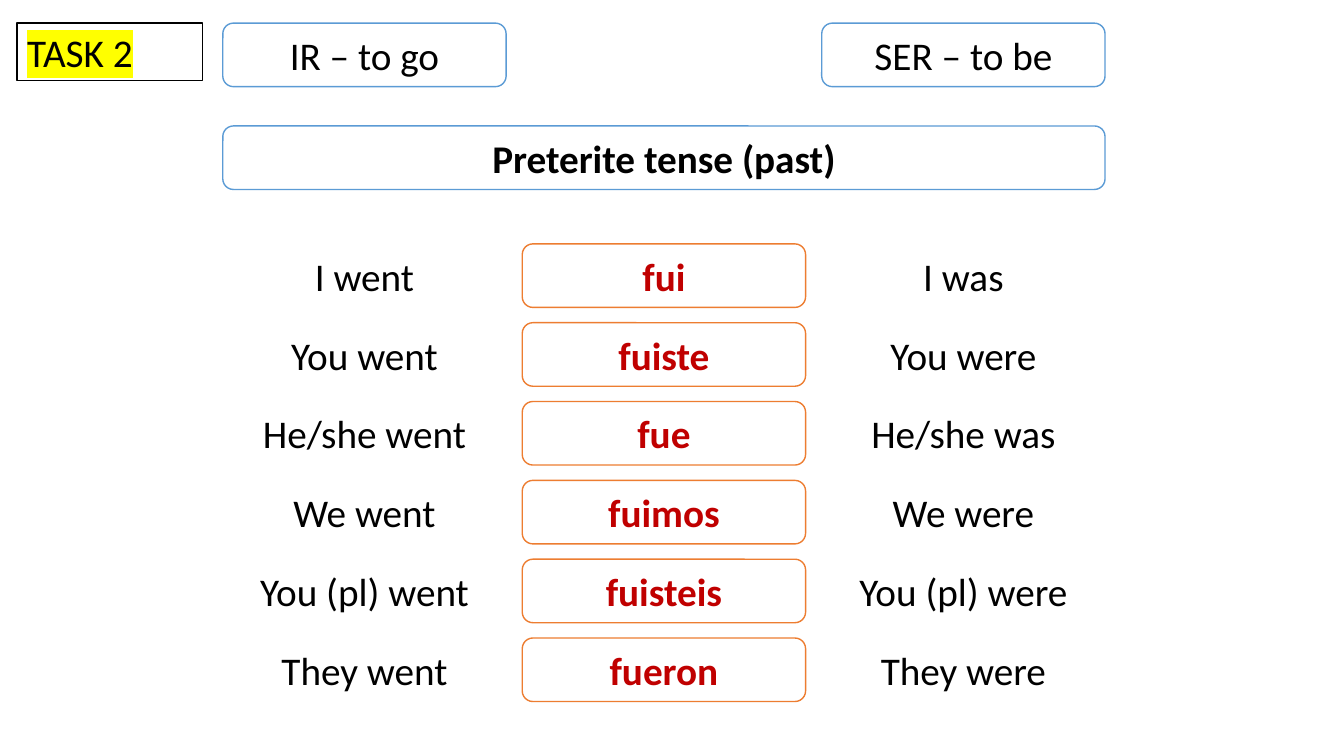
from lxml import etree
from pptx import Presentation, util as u
from pptx.dml.color import RGBColor
from pptx.enum import shapes, text
from pptx.oxml.ns import qn

COLORS = {"paper": "FFFFFF", "ink": "000000", "verb": "C00000",
          "verb_edge": "ED7D31", "title_edge": "5B9BD5", "marker": "FFFF00"}
COLUMN_LEFT, COLUMN_PITCH = 2.21, 2.97
ROW_TOP, ROW_PITCH = 2.42, 0.782
CARD_WIDTH, CARD_HEIGHT = 2.81, 0.63
HEADER_TOP, TENSE_TOP = 0.23, 1.25

CONJUGATION = [
    ("I went", "fui", "I was"),
    ("You went", "fuiste", "You were"),
    ("He/she went", "fue", "He/she was"),
    ("We went", "fuimos", "We were"),
    ("You (pl) went", "fuisteis", "You (pl) were"),
    ("They went", "fueron", "They were"),
]


def rgb(name):
    return RGBColor.from_string(COLORS[name])


def column_left(column):
    return COLUMN_LEFT + column * COLUMN_PITCH


def add_card(parent, box, wording, edge=None, ink="ink", bold=False,
             outline=shapes.MSO_SHAPE.ROUNDED_RECTANGLE):
    """Add a white card with centred text; without an edge colour it has no line."""
    card = parent.add_shape(outline, *(u.Inches(length) for length in box))
    card.shadow.inherit = False
    card.fill.solid()
    card.fill.fore_color.rgb = rgb("paper")
    if edge:
        card.line.color.rgb = rgb(edge)
        card.line.width = u.Pt(1)
    else:
        card.line.fill.background()
    frame = card.text_frame
    frame.word_wrap = True
    frame.vertical_anchor = text.MSO_ANCHOR.MIDDLE
    paragraph = frame.paragraphs[0]
    paragraph.text = wording
    paragraph.alignment = text.PP_ALIGN.CENTER
    font = paragraph.font
    font.name, font.size, font.bold = "Calibri", u.Pt(28), bold
    font.color.rgb = rgb(ink)
    return card


def add_column(parent, column, **style):
    for row, forms in enumerate(CONJUGATION):
        box = (column_left(column), ROW_TOP + row * ROW_PITCH, CARD_WIDTH, CARD_HEIGHT)
        add_card(parent, box, forms[column], **style)


def add_conjugation(slide):
    add_column(slide.shapes, 1, edge="verb_edge", ink="verb", bold=True)
    for translation in (0, 2):
        add_column(slide.shapes.add_group_shape().shapes, translation)


def add_headings(slide):
    for column, infinitive in ((0, "IR – to go"), (2, "SER – to be")):
        box = (column_left(column), HEADER_TOP, CARD_WIDTH, CARD_HEIGHT)
        add_card(slide.shapes, box, infinitive, edge="title_edge")
    full_width = 2 * COLUMN_PITCH + CARD_WIDTH
    add_card(slide.shapes, (COLUMN_LEFT, TENSE_TOP, full_width, CARD_HEIGHT),
             "Preterite tense (past)", edge="title_edge", bold=True)


def add_task_label(slide, box):
    label = add_card(slide.shapes, box, "TASK 2", edge="ink",
                     outline=shapes.MSO_SHAPE.RECTANGLE)
    label.text_frame.vertical_anchor = text.MSO_ANCHOR.TOP
    label.text_frame.auto_size = text.MSO_AUTO_SIZE.SHAPE_TO_FIT_TEXT
    paragraph = label.text_frame.paragraphs[0]
    paragraph.alignment = text.PP_ALIGN.LEFT
    run_properties = paragraph.runs[0]._r.get_or_add_rPr()
    highlight = etree.SubElement(run_properties, qn("a:highlight"))
    etree.SubElement(highlight, qn("a:srgbClr"), val=COLORS["marker"])


def main():
    deck = Presentation()
    deck.slide_width, deck.slide_height = u.Inches(13.33), u.Inches(7.5)
    slide = deck.slides.add_slide(deck.slide_layouts[6])
    add_conjugation(slide)
    add_headings(slide)
    add_task_label(slide, (0.17, HEADER_TOP, 1.84, 0.57))
    deck.save("out.pptx")


if __name__ == "__main__":
    main()
